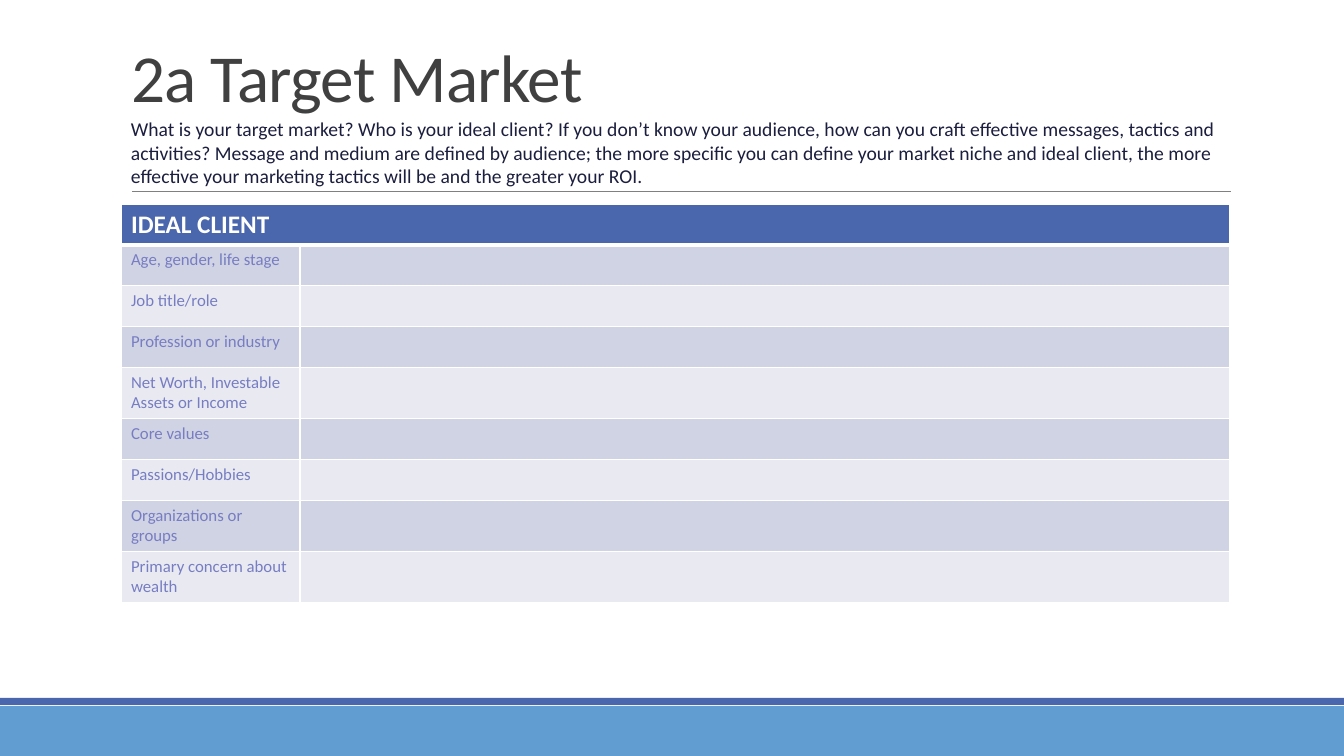
from lxml.etree import SubElement
from pptx import Presentation
from pptx.dml.color import RGBColor
from pptx.enum.shapes import MSO_CONNECTOR as CONNECTOR, MSO_SHAPE as SHAPE
from pptx.enum.text import MSO_ANCHOR as ANCHOR, MSO_AUTO_SIZE as AUTO_SIZE, PP_ALIGN as ALIGN
from pptx.oxml.ns import qn
from pptx.util import Emu, Pt

TITLE = "2a Target Market"
INTRO = (
    "What is your target market? Who is your ideal client? If you don’t know your audience, "
    "how can you craft effective messages, tactics and activities? Message and medium are "
    "defined by audience; the more specific you can define your market niche and ideal client, "
    "the more effective your marketing tactics will be and the greater your ROI."
)
TABLE_HEADING = "IDEAL CLIENT"
CLIENT_TRAITS = [
    "Age, gender, life stage",
    "Job title/role",
    "Profession or industry",
    "Net Worth, Investable Assets or Income",
    "Core values",
    "Passions/Hobbies",
    "Organizations or groups",
    "Primary concern about wealth",
]
FOOTER_BANDS = [((0, 706, 1344, 50), "629DD1"), ((0, 698, 1344, 7), "4A66AC")]
TITLE_BOX = (121, 31, 1109, 160)
INTRO_BOX = (121, 112, 1141, 102)
TABLE_BOX = (121, 204, 1109, 367)
COLUMN_WIDTHS = (179, 930)
RULE = (132, 191, 1231, 191)
HEADER_FILL = "4A66AC"
ROW_FILLS = ("D0D3E3", "E9EAF1")
FONT = "Calibri"


def px(length):
    return Emu(round(length * 914400 / 100.8))


def box(lengths):
    return [px(length) for length in lengths]


def color(value):
    return RGBColor.from_string(value)


def add_run(paragraph, text, size, value, bold=False):
    run = paragraph.add_run()
    run.text = text
    run.font.name = FONT
    run.font.size = Pt(size)
    run.font.bold = bold
    run.font.color.rgb = color(value)
    return run


def add_border(cell, side, width):
    line = SubElement(cell._tc.get_or_add_tcPr(), qn(f"a:ln{side}"), w=str(Pt(width)))
    SubElement(SubElement(line, qn("a:solidFill")), qn("a:srgbClr"), val="FFFFFF")


def add_footer_and_rule(slide):
    for band, fill in FOOTER_BANDS:
        shape = slide.shapes.add_shape(SHAPE.RECTANGLE, *box(band))
        shape.shadow.inherit = False
        shape.fill.solid()
        shape.fill.fore_color.rgb = color(fill)
        shape.line.fill.background()
    rule = slide.shapes.add_connector(CONNECTOR.STRAIGHT, *box(RULE))
    rule.line.color.rgb = color("808080")
    rule.line.width = Pt(0.5)
    SubElement(rule._element.spPr, qn("a:effectLst"))


def format_title(title):
    title.left, title.top, title.width, title.height = box(TITLE_BOX)
    frame = title.text_frame
    frame.word_wrap = True
    frame.auto_size = AUTO_SIZE.NONE
    frame.vertical_anchor = ANCHOR.BOTTOM
    frame.margin_bottom = px(75)
    paragraph = frame.paragraphs[0]
    paragraph.alignment = ALIGN.LEFT
    paragraph.line_spacing = 0.85
    run = add_run(paragraph, TITLE, 48, "404040")
    run.font._element.set("spc", "-50")


def add_client_table(slide):
    row_count = len(CLIENT_TRAITS) + 1
    table = slide.shapes.add_table(row_count, len(COLUMN_WIDTHS), *box(TABLE_BOX)).table
    for column, width in zip(table.columns, COLUMN_WIDTHS):
        column.width = px(width)
    for index, row in enumerate(table.rows):
        row.height = px(TABLE_BOX[3] / row_count)
        for cell in row.cells:
            add_border(cell, "L", 1)
            add_border(cell, "R", 1)
            add_border(cell, "T", 3 if index == 1 else 1)
            add_border(cell, "B", 3 if index == 0 else 1)
            cell.fill.solid()
            cell.fill.fore_color.rgb = color(ROW_FILLS[(index - 1) % 2] if index else HEADER_FILL)
    table.cell(0, 0).merge(table.cell(0, 1))
    add_run(table.cell(0, 0).text_frame.paragraphs[0], TABLE_HEADING, 18, "FFFFFF", bold=True)
    for index, trait in enumerate(CLIENT_TRAITS, 1):
        add_run(table.cell(index, 0).text_frame.paragraphs[0], trait, 12, "777DC3")


def add_intro(slide):
    frame = slide.shapes.add_textbox(*box(INTRO_BOX)).text_frame
    frame.word_wrap = True
    frame.auto_size = AUTO_SIZE.SHAPE_TO_FIT_TEXT
    add_run(frame.paragraphs[0], INTRO, 14, "1B1E3E")


def main():
    """Build the target market slide and save it."""
    presentation = Presentation()
    presentation.slide_width, presentation.slide_height = px(1344), px(756)
    slide = presentation.slides.add_slide(presentation.slide_layouts[5])
    add_footer_and_rule(slide)
    format_title(slide.shapes.title)
    add_client_table(slide)
    add_intro(slide)
    presentation.save("out.pptx")


if __name__ == "__main__":
    main()
